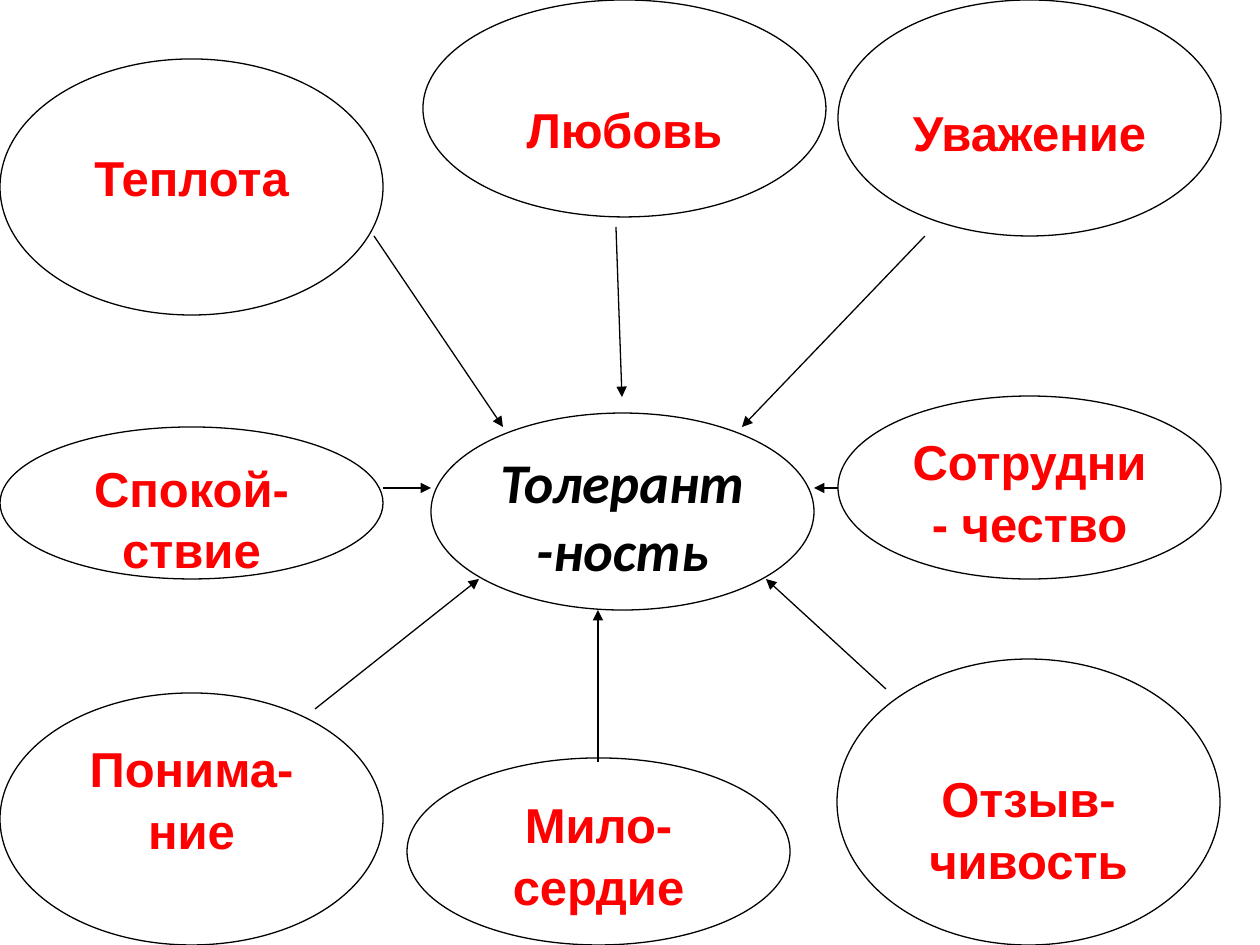
from dataclasses import dataclass

from lxml.etree import SubElement
from pptx import Presentation
from pptx.dml.color import RGBColor
from pptx.enum.shapes import MSO_CONNECTOR, MSO_SHAPE
from pptx.enum.text import MSO_ANCHOR, PP_ALIGN
from pptx.oxml.ns import qn
from pptx.util import Pt


@dataclass(frozen=True)
class Theme:
    paper: RGBColor = RGBColor(255, 255, 255)
    ink: RGBColor = RGBColor(0, 0, 0)
    red: RGBColor = RGBColor(255, 0, 0)
    rule: Pt = Pt(0.75)
    core: Pt = Pt(32)
    trait: Pt = Pt(28)


THEME = Theme()
SCALE = 914400 / 126
WIDE = 383  # common width of the ovals
LEFT, RIGHT = 0, 838  # outer columns

CORE_FONT = dict(name="Calibri", size=THEME.core, bold=True, italic=True)
TRAIT_FONT = dict(name="Arial", size=THEME.trait, bold=True)

# Text, left, top, width, height, drop of the text below the usual start
TRAITS = [
    ("Мило-сердие", 407, 758, WIDE, 187, 0),
    ("Отзыв-чивость", 837, 659, WIDE, 286, 59),
    ("Сотрудни- чество", RIGHT, 396, WIDE, 183, 0),
    ("Уважение", RIGHT, 0, WIDE, 236, 59),
    ("Любовь", 423, 0, 403, 217, 59),
    ("Понима-ние", LEFT, 693, WIDE, 252, 0),
    ("Теплота", LEFT, 59, WIDE, 256, 42),
    ("Спокой-ствие", LEFT, 427, WIDE, 152, 0),
]

# Start and end of each arrow, pointing at the core
ARROWS = [
    (315, 709, 479, 579),
    (383, 488, 431, 488),
    (374, 236, 503, 427),
    (616, 227, 622, 397),
    (598, 762, 598, 610),
    (886, 689, 766, 579),
    (925, 236, 742, 427),
    (838, 488, 814, 488),
]


def px(n):
    return round(n * SCALE)


def style(item, values):
    for key, value in values.items():
        setattr(item, key, value)


def stroke(line):
    line.color.rgb = THEME.ink
    line.width = THEME.rule


def oval(slide, text, box, font, color, drop=0, lead=1.0):
    shape = slide.shapes.add_shape(MSO_SHAPE.OVAL, *map(px, box))
    shape.shadow.inherit = False
    shape.fill.solid()
    shape.fill.fore_color.rgb = THEME.paper
    stroke(shape.line)
    frame = shape.text_frame
    style(frame, dict(word_wrap=True, vertical_anchor=MSO_ANCHOR.TOP,
                      margin_top=px(6 + drop)))
    para = frame.paragraphs[0]
    style(para, dict(alignment=PP_ALIGN.CENTER, line_spacing=lead))
    run = para.add_run()
    run.text = text
    style(run.font, font)
    run.font.color.rgb = color


def arrow(slide, ends):
    link = slide.shapes.add_connector(MSO_CONNECTOR.STRAIGHT, *map(px, ends))
    stroke(link.line)
    SubElement(link.line._get_or_add_ln(), qn("a:tailEnd"), type="triangle")
    SubElement(link._element.spPr, qn("a:effectLst"))


def main():
    deck = Presentation()
    style(deck, dict(slide_width=px(1260), slide_height=px(945)))
    slide = deck.slides.add_slide(deck.slide_layouts[6])

    # Core idea
    oval(slide, "Толерант-ность", (431, 413, WIDE, 197), CORE_FONT, THEME.ink)

    # Traits around it
    for text, *box, drop in TRAITS:
        oval(slide, text, box, TRAIT_FONT, THEME.red, drop, lead=1.05)

    # Arrows to the core
    for ends in ARROWS:
        arrow(slide, ends)

    deck.save("out.pptx")


if __name__ == "__main__":
    main()
